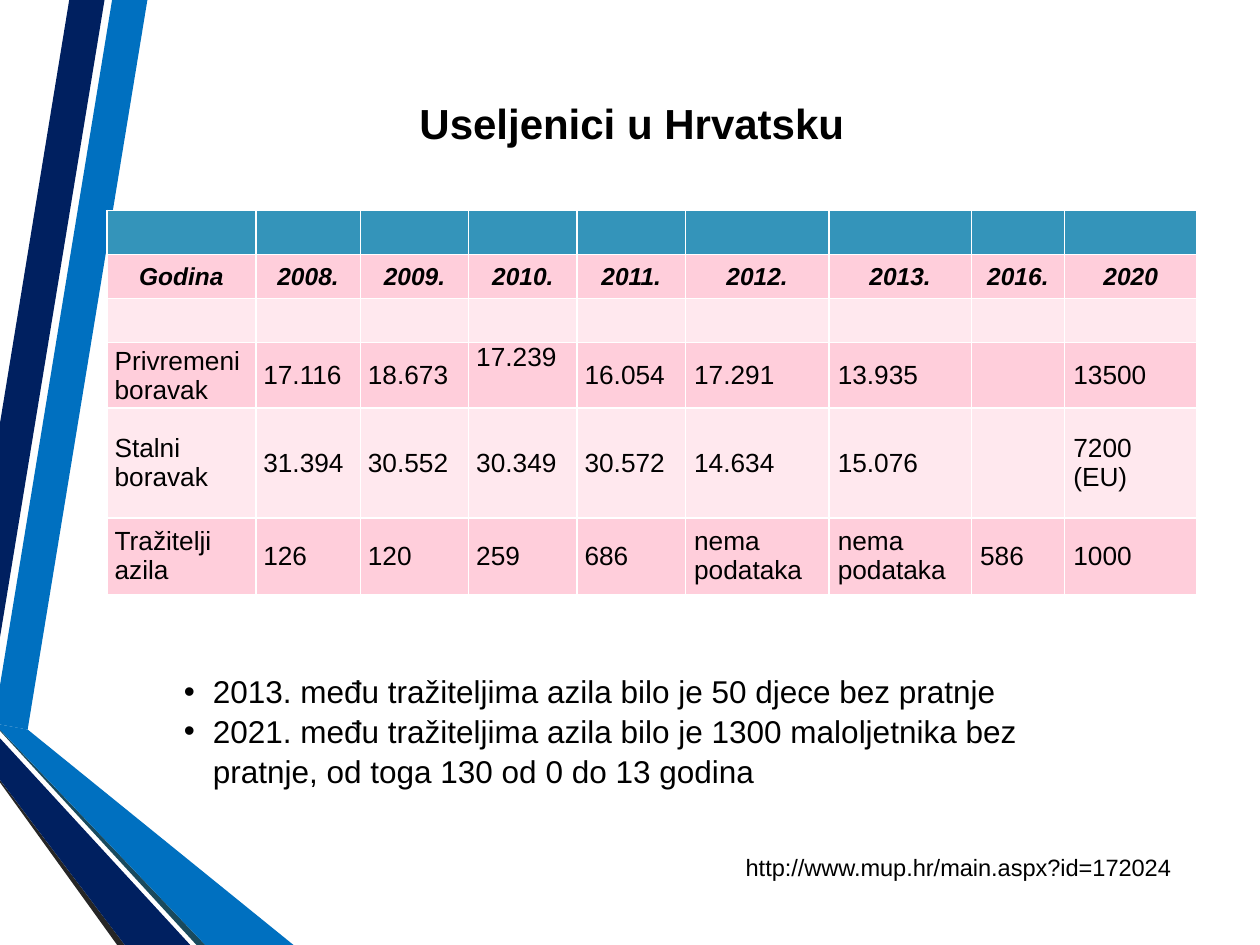
from pptx import Presentation, util as u
from pptx.dml.color import RGBColor
from pptx.enum import text as t
from pptx.oxml import parse_xml
from pptx.oxml.ns import nsdecls

# Content
TITLE = "Useljenici u Hrvatsku"
ROWS = [
    [""] * 9,
    ["Godina", "2008.", "2009.", "2010.", "2011.", "2012.", "2013.", "2016.", "2020"],
    [""] * 9,
    ["Privremeni boravak", "17.116", "18.673", "17.239", "16.054", "17.291", "13.935", "", "13500"],
    ["Stalni boravak", "31.394", "30.552", "30.349", "30.572", "14.634", "15.076", "", "7200 (EU)"],
    ["Tražitelji azila", "126", "120", "259", "686", "nema podataka", "nema podataka", "586", "1000"],
]
NOTES = [
    "2013. među tražiteljima azila bilo je 50 djece bez pratnje",
    "2021. među tražiteljima azila bilo je 1300 maloljetnika bez pratnje, od toga 130 od 0 do 13 godina",
]
LINK = "http://www.mup.hr/main.aspx?id=172024"

# Look
HEX = {"blue": "0070C0", "navy": "002060", "dark": "262626", "teal": "1A4A5D",
       "head": "3494BA", "rose": "FFCEDB", "pale": "FFE8EE", "ink": "000000"}
WIDTHS = [1.18, 0.83, 0.86, 0.86, 0.86, 1.14, 1.13, 0.74, 1.05]
HEIGHTS = [0.35, 0.35, 0.35, 0.52, 0.87, 0.61]
YEARS = 1       # row with the years
NARROW = 5      # columns with the tighter margins
RAISED = (3, 3)  # cell set at the top of its row
BANDS = [
    ("blue", [(0, 5.44), (0, 5.75), (0.22, 5.79), (1.17, 0), (0.89, 0)]),
    ("navy", [(0.83, 0), (0.55, 0), (0, 3.36), (0, 5.06)]),
    ("dark", [(0, 6.19), (0, 6.21), (0.93, 7.5), (0.99, 7.5)]),
    ("teal", [(0, 5.79), (0, 5.8), (1.56, 7.5), (1.63, 7.5)]),
    ("blue", [(0, 5.79), (1.63, 7.5), (2.33, 7.5), (0.22, 5.79), (0, 5.75)]),
    ("navy", [(0, 6.19), (0.99, 7.5), (1.51, 7.5), (0, 5.86)]),
]


def assign(item, **values):
    for name, value in values.items():
        setattr(item, name, value)


def place(item, *box):
    for name, value in zip(("left", "top", "width", "height"), box):
        setattr(item, name, u.Inches(value))


def color(name):
    return RGBColor.from_string(HEX[name])


def write(par, words, size, **style):
    run = par.add_run()
    run.text = words
    assign(run.font, name="Arial", size=u.Pt(size), **style)
    run.font.color.rgb = color("ink")


def paint(item, name):
    item.fill.solid()
    item.fill.fore_color.rgb = color(name)


def draw_bands(slide):
    for name, points in BANDS:
        dots = [(u.Inches(x), u.Inches(y)) for x, y in points]
        pen = slide.shapes.build_freeform(*dots[0])
        pen.add_line_segments(dots[1:], close=True)
        band = pen.convert_to_shape()
        band.shadow.inherit = False
        paint(band, name)
        band.line.fill.background()


def fill_cell(cell, row, col, words):
    paint(cell, "head" if row == 0 else "rose" if row % 2 else "pale")
    side, edge = (0.06, 0) if col < NARROW or not words else (0.07, 0.04)
    if (row, col) == RAISED:
        anchor = t.MSO_ANCHOR.TOP
    else:
        anchor = t.MSO_ANCHOR.MIDDLE
    assign(cell, vertical_anchor=anchor,
           margin_left=u.Inches(side), margin_right=u.Inches(side),
           margin_top=u.Inches(edge), margin_bottom=u.Inches(edge))
    if words:
        par = cell.text_frame.paragraphs[0]
        year = row == YEARS
        par.alignment = t.PP_ALIGN.CENTER if year else t.PP_ALIGN.LEFT
        write(par, words, 14 if year else 15, bold=year, italic=year)


def draw_table(slide):
    box = [u.Inches(n) for n in (0.85, 1.67, sum(WIDTHS), sum(HEIGHTS))]
    table = slide.shapes.add_table(len(ROWS), len(WIDTHS), *box).table
    for col, width in zip(table.columns, WIDTHS):
        col.width = u.Inches(width)
    for row, height in zip(table.rows, HEIGHTS):
        row.height = u.Inches(height)
    for r, row in enumerate(ROWS):
        for c, words in enumerate(row):
            fill_cell(table.cell(r, c), r, c, words)


def main():
    deck = Presentation()
    assign(deck, slide_width=u.Inches(10), slide_height=u.Inches(7.5))
    slide = deck.slides.add_slide(deck.slide_layouts[1])
    draw_bands(slide)
    draw_table(slide)

    # Title
    title, body = slide.placeholders
    place(title, 1.36, 0.68, 7.31, 0.59)
    assign(title.text_frame, vertical_anchor=t.MSO_ANCHOR.MIDDLE,
           auto_size=t.MSO_AUTO_SIZE.NONE)
    par = title.text_frame.paragraphs[0]
    par.alignment = t.PP_ALIGN.CENTER
    write(par, TITLE, 24, bold=True)

    # Bulleted notes
    place(body, 1.36, 5.27, 7.67, 1.62)
    frame = body.text_frame
    frame.auto_size = t.MSO_AUTO_SIZE.NONE
    for i, words in enumerate(NOTES):
        par = frame.add_paragraph() if i else frame.paragraphs[0]
        assign(par, space_before=u.Pt(0), line_spacing=1.05)
        props = par._p.get_or_add_pPr()
        props.set("marL", str(u.Inches(0.23)))
        props.set("indent", str(u.Inches(-0.23)))
        props.append(parse_xml(f'<a:buChar {nsdecls("a")} char="•"/>'))
        write(par, words, 18)

    # Web address
    link = slide.shapes.add_textbox(*[u.Inches(n) for n in (5.82, 6.72, 3.6, 0.33)])
    link.text_frame.word_wrap = False
    write(link.text_frame.paragraphs[0], LINK, 13.5)

    deck.save("out.pptx")


if __name__ == "__main__":
    main()
